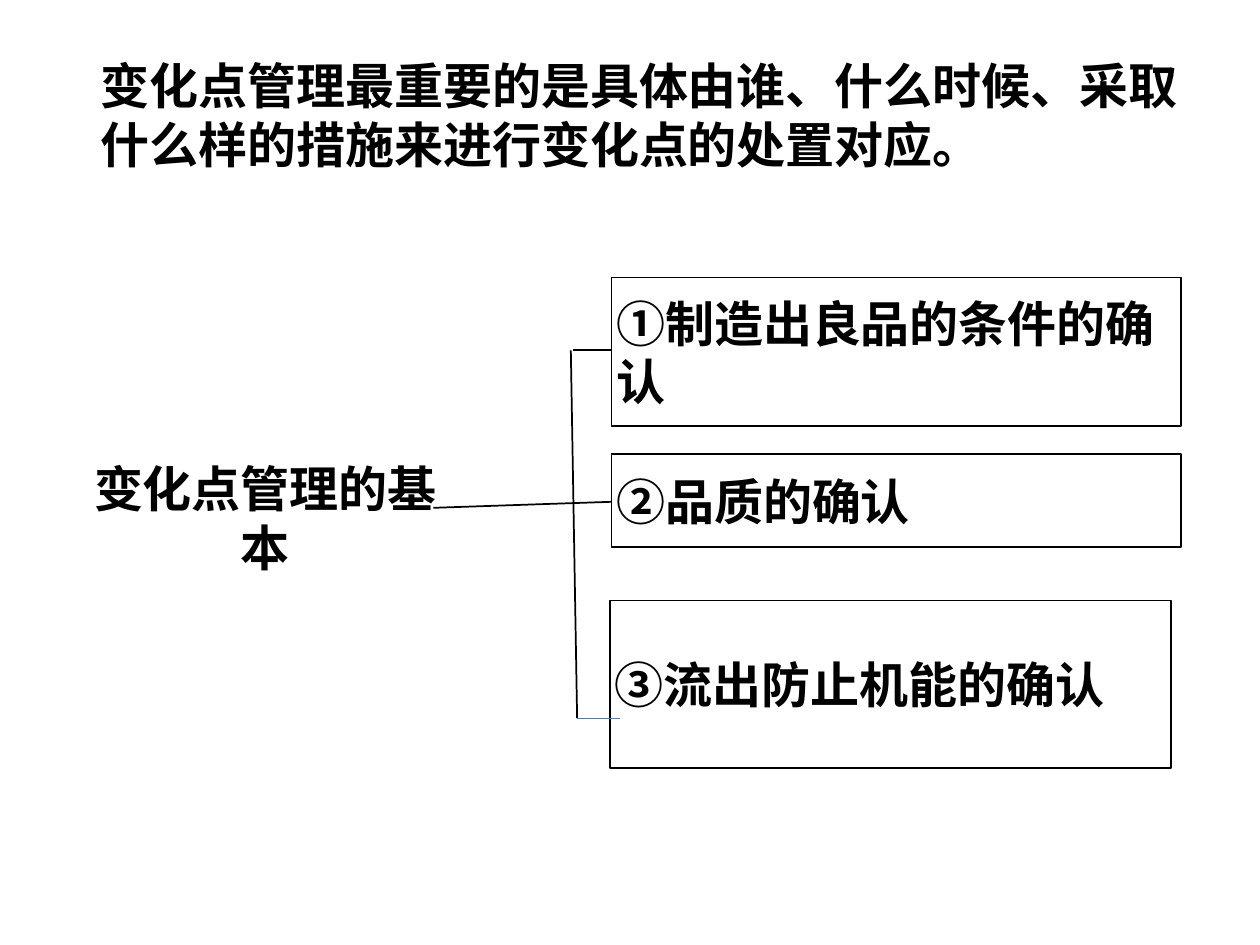
"""Build a slide that branches change-point management into three checks."""
from lxml.etree import SubElement
from pptx import Presentation
from pptx.dml.color import RGBColor as Rgb
from pptx.enum.shapes import MSO_CONNECTOR as Connector, MSO_SHAPE as Shape
from pptx.enum.text import MSO_ANCHOR as Anchor, MSO_AUTO_SIZE as AutoSize, PP_ALIGN as Align
from pptx.oxml.ns import qn
from pptx.util import Pt

COLORS = {"text": "000000", "line": "000000", "fill": "FFFFFF", "accent": "4B7EBC"}


class SlideBuilder:
    """Hold the text style and the slide being filled."""

    font_name = "Noto Sans CJK SC"
    font_size = 28

    def __init__(self, deck):
        self.slide = deck.slides.add_slide(deck.slide_layouts[5])

    def style_text(self, frame, text, align, anchor):
        frame.text = text
        frame.word_wrap = True
        frame.auto_size = AutoSize.NONE
        frame.vertical_anchor = anchor
        para = frame.paragraphs[0]
        para.alignment = align
        span = para.runs[0]
        span.font.name = self.font_name
        span.font.size = Pt(self.font_size)
        span.font.bold = True
        span.font.color.rgb = Rgb.from_string(COLORS["text"])
        east_asian = SubElement(span.font._element, qn("a:ea"))
        east_asian.set("typeface", self.font_name)

    def title(self, text, left, top, width, height):
        title = self.slide.shapes.title
        title.left, title.top = Pt(left), Pt(top)
        title.width, title.height = Pt(width), Pt(height)
        self.style_text(title.text_frame, text, Align.LEFT, Anchor.TOP)

    def box(self, text, left, top, width, height, align=Align.LEFT, right_inset=0, outlined=True):
        box = self.slide.shapes.add_shape(
            Shape.RECTANGLE, Pt(left), Pt(top), Pt(width), Pt(height))
        box.shadow.inherit = False
        box.fill.solid()
        box.fill.fore_color.rgb = Rgb.from_string(COLORS["fill"])
        if outlined:
            box.line.color.rgb = Rgb.from_string(COLORS["line"])
            box.line.width = Pt(1)
        else:
            box.line.fill.background()
        frame = box.text_frame
        frame.margin_left, frame.margin_right = Pt(2.8), Pt(right_inset)
        frame.margin_top = frame.margin_bottom = Pt(1.4)
        self.style_text(frame, text, align, Anchor.MIDDLE)

    def line(self, start, end, color="line", weight=1):
        line = self.slide.shapes.add_connector(
            Connector.STRAIGHT, *(Pt(value) for value in (*start, *end)))
        line.line.color.rgb = Rgb.from_string(COLORS[color])
        line.line.width = Pt(weight)
        SubElement(line._element.spPr, qn("a:effectLst"))


def main():
    deck = Presentation()
    deck.slide_width, deck.slide_height = Pt(720), Pt(540)
    page = SlideBuilder(deck)

    page.title("变化点管理最重要的是具体由谁、什么时候、采取什么样的措施来进行变化点的处置对应。",
               50.4, 28.1, 630, 87)
    page.box("变化点管理的基本", 50.4, 253.4, 202.4, 84.3,
             align=Align.CENTER, right_inset=2.8, outlined=False)

    trunk_top, trunk_bottom = (326.2, 200.2), (329.8, 410.4)
    page.line(trunk_top, trunk_bottom)
    page.line((327.6, 200.2), (356.4, 200.2))
    page.line((247.7, 290.2), (354.2, 286.6))

    checks = [
        ("①制造出良品的条件的确认", 349.4, 158.6, 325.6, 84.9),
        ("②品质的确认", 349.4, 259.4, 325.6, 53.2),
        ("③流出防止机能的确认", 348.5, 343.2, 320.6, 95.7),
    ]
    for check in checks:
        page.box(*check)
    page.line(trunk_bottom, (354.2, 410.4), color="accent", weight=0.75)

    deck.save("out.pptx")


if __name__ == "__main__":
    main()
